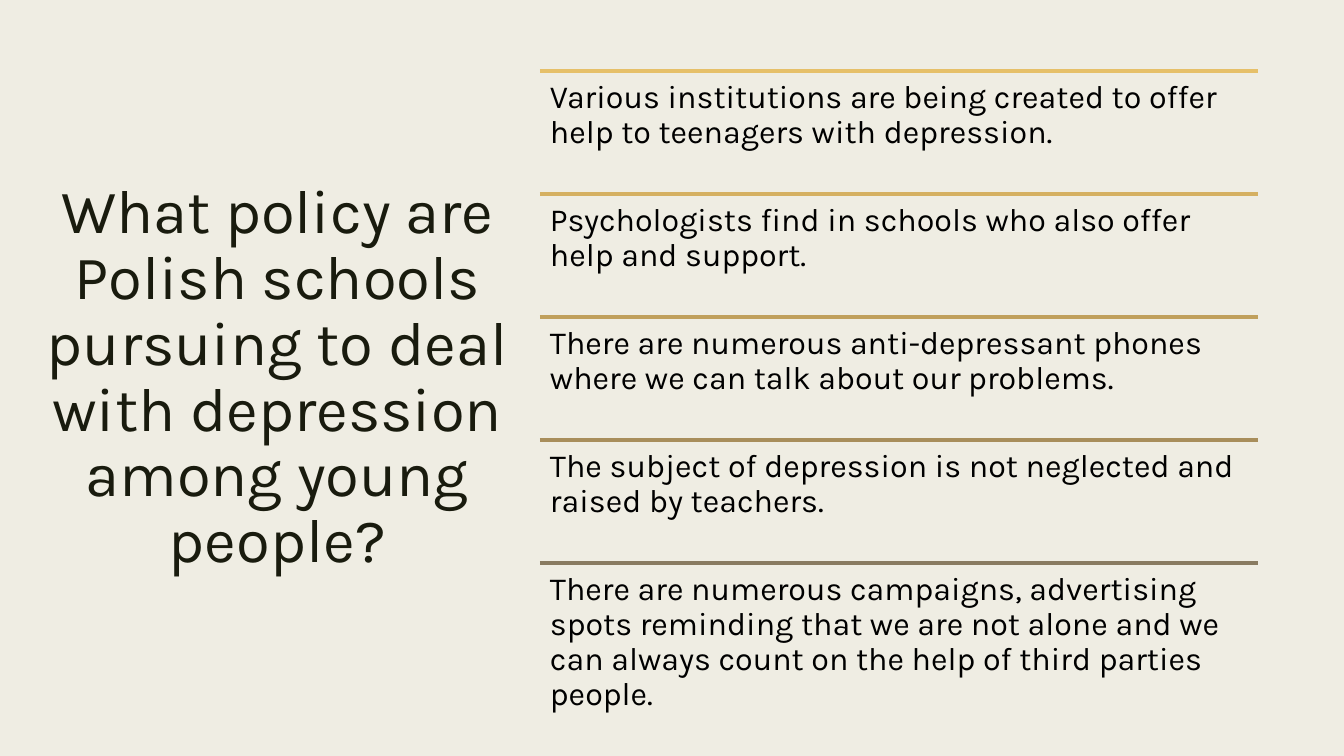
"""Build a slide listing how Polish schools respond to depression among young people."""
from dataclasses import dataclass

from lxml.etree import SubElement
from pptx import Presentation
from pptx.dml.color import RGBColor
from pptx.enum.shapes import MSO_CONNECTOR as Connector
from pptx.enum.text import MSO_ANCHOR as Anchor, PP_ALIGN as Align
from pptx.oxml.ns import qn
from pptx.slide import Slide
from pptx.util import Emu, Pt

EMU_PER_PX = 914400 / 100.8
FONT = "Karla"
CREAM = RGBColor(0xEF, 0xED, 0xE3)
INK = RGBColor(0x19, 0x1B, 0x0E)
BLACK = RGBColor(0x00, 0x00, 0x00)
GOLD = RGBColor(0xE6, 0xC0, 0x69)
AMBER = RGBColor(0xD5, 0xB0, 0x61)
OCHRE = RGBColor(0xC0, 0xA0, 0x5C)
BRONZE = RGBColor(0xA8, 0x8E, 0x5B)
TAUPE = RGBColor(0x89, 0x7B, 0x61)

LIST_LEFT, LIST_TOP, LIST_WIDTH, ROW_HEIGHT = 540, 71, 718, 123
INSET = 10


@dataclass(frozen=True)
class Measure:
    """One school measure and the colour of the rule above it."""
    text: str
    rule_color: RGBColor


@dataclass(frozen=True)
class TextStyle:
    """Look of a block of text."""
    size: int
    color: RGBColor
    line_spacing: float
    align: Align
    anchor: Anchor


QUESTION = "What policy are Polish schools pursuing to deal with depression among young people?"
QUESTION_STYLE = TextStyle(44, INK, 0.89, Align.CENTER, Anchor.MIDDLE)
MEASURE_STYLE = TextStyle(23, BLACK, 0.9, Align.LEFT, Anchor.TOP)
MEASURES = [
    Measure("Various institutions are being created to offer help to teenagers with depression.", GOLD),
    Measure("Psychologists find in schools who also offer help and support.", AMBER),
    Measure("There are numerous anti-depressant phones where we can talk about our problems.", OCHRE),
    Measure("The subject of depression is not neglected and raised by teachers.", BRONZE),
    Measure("There are numerous campaigns, advertising spots reminding that we are not alone "
            "and we can always count on the help of third parties people.", TAUPE),
]


def px(length: int) -> Emu:
    """Turn whole pixels into EMU."""
    return Emu(round(length * EMU_PER_PX))


def add_text(slide: Slide, text: str, style: TextStyle,
             left: int, top: int, width: int, height: int) -> None:
    """Add a wrapped text box with one styled run."""
    frame = slide.shapes.add_textbox(px(left), px(top), px(width), px(height)).text_frame
    frame.word_wrap = True
    frame.vertical_anchor = style.anchor
    frame.margin_left = frame.margin_right = px(INSET)
    frame.margin_top = frame.margin_bottom = px(INSET)
    paragraph = frame.paragraphs[0]
    paragraph.alignment = style.align
    paragraph.line_spacing = style.line_spacing
    run = paragraph.add_run()
    run.text = text
    run.font.name = FONT
    run.font.size = Pt(style.size)
    run.font.color.rgb = style.color


def add_rule(slide: Slide, top: int, color: RGBColor) -> None:
    """Draw the horizontal rule that opens a row."""
    rule = slide.shapes.add_connector(Connector.STRAIGHT, px(LIST_LEFT), px(top),
                                      px(LIST_LEFT + LIST_WIDTH), px(top))
    rule.line.color.rgb = color
    rule.line.width = Pt(2.75)
    SubElement(rule._element.spPr, qn("a:effectLst"))


def add_measure(slide: Slide, row: int, measure: Measure) -> None:
    """Add one row of the list: its rule and its text."""
    top = LIST_TOP + row * ROW_HEIGHT
    add_rule(slide, top, measure.rule_color)
    add_text(slide, measure.text, MEASURE_STYLE, LIST_LEFT, top, LIST_WIDTH, ROW_HEIGHT)


def main() -> None:
    """Build and save the slide."""
    deck = Presentation()
    deck.slide_width, deck.slide_height = px(1344), px(756)
    slide = deck.slides.add_slide(deck.slide_layouts[6])
    slide.background.fill.solid()
    slide.background.fill.fore_color.rgb = CREAM
    add_text(slide, QUESTION, QUESTION_STYLE, 29, LIST_TOP, 497, len(MEASURES) * ROW_HEIGHT)
    for row, measure in enumerate(MEASURES):
        add_measure(slide, row, measure)
    deck.save("out.pptx")


if __name__ == "__main__":
    main()
